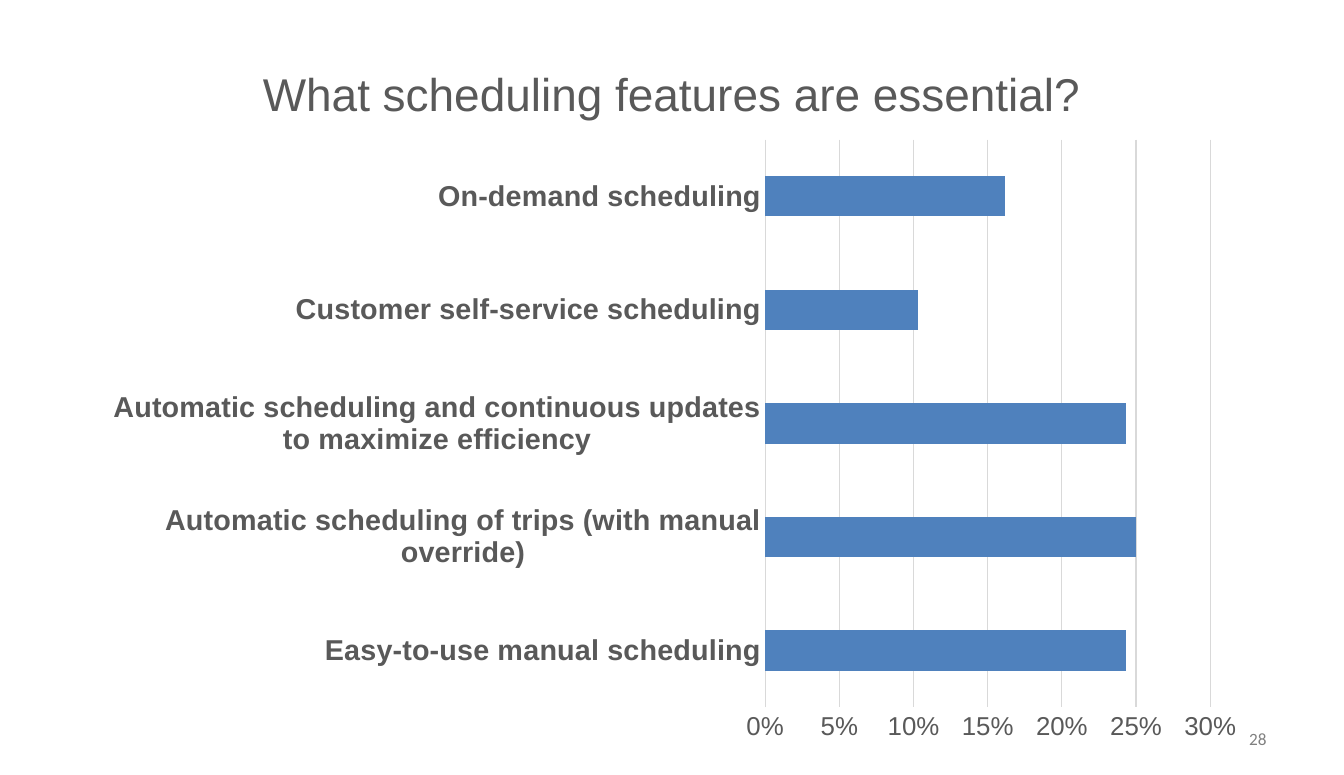
from lxml.etree import SubElement
from pptx import Presentation
from pptx.chart.data import CategoryChartData
from pptx.dml.color import RGBColor
from pptx.enum.chart import XL_CHART_TYPE as ChartType, XL_TICK_MARK as TickMark
from pptx.enum.text import MSO_ANCHOR as Anchor, PP_ALIGN as Align
from pptx.oxml.ns import qn
from pptx.util import Inches, Pt

COLORS = {"text": "595959", "number": "808080", "grid": "D9D9D9", "bar": "4F81BD"}
FEATURES = {
    "Easy-to-use manual scheduling": 0.243,
    "Automatic scheduling of trips (with manual override)": 0.25,
    "Automatic scheduling and continuous updates to maximize efficiency": 0.243,
    "Customer self-service scheduling": 0.103,
    "On-demand scheduling": 0.162,
}
PLOT_AREA = {"x": 0.58, "y": 0.02, "w": 0.38, "h": 0.91}


def color(name):
    return RGBColor.from_string(COLORS[name])


def style_font(font, size, color_name, name="Arial", bold=False):
    font.size = Pt(size)
    font.name = name
    font.bold = bold
    font.color.rgb = color(color_name)


def style_line(line, color_name):
    line.color.rgb = color(color_name)
    line.width = Pt(0.75)


def write_text(box, text, align, size, color_name, name="Arial"):
    frame = box.text_frame
    frame.text = text
    frame.word_wrap = True
    frame.vertical_anchor = Anchor.MIDDLE
    para = frame.paragraphs[0]
    para.alignment = align
    style_font(para.runs[0].font, size, color_name, name)


def add_title(page, text):
    title = page.shapes.title
    title.left, title.top = Inches(0.65), Inches(0.59)
    title.width, title.height = Inches(11.7), Inches(0.63)
    write_text(title, text, Align.CENTER, 32, "text")


def add_page_number(page, number):
    box = page.shapes.add_textbox(Inches(9.32), Inches(6.95), Inches(3.03), Inches(0.4))
    write_text(box, number, Align.RIGHT, 12, "number", "Calibri")


def place_plot(chart):
    plot_area = chart._chartSpace.chart.plotArea
    for old in plot_area.findall(qn("c:layout")):
        plot_area.remove(old)
    layout = SubElement(plot_area, qn("c:layout"))
    plot_area.insert(0, layout)
    manual = SubElement(layout, qn("c:manualLayout"))
    settings = {"layoutTarget": "inner", "xMode": "edge", "yMode": "edge", **PLOT_AREA}
    for tag, value in settings.items():
        SubElement(manual, qn(f"c:{tag}")).set("val", str(value))


def style_axis(axis, size, bold=False):
    axis.major_tick_mark = axis.minor_tick_mark = TickMark.NONE
    style_font(axis.tick_labels.font, size, "text", bold=bold)


def add_feature_chart(page):
    data = CategoryChartData(number_format="0%")
    data.categories = list(FEATURES)
    data.add_series("Series 1", list(FEATURES.values()))
    chart = page.shapes.add_chart(
        ChartType.BAR_CLUSTERED, Inches(0.83), Inches(1.23), Inches(11.33), Inches(6.04), data
    ).chart
    chart.has_title = False
    chart.has_legend = False
    chart.font.size = Pt(10)
    chart.font.name = "Arial"

    plot = chart.plots[0]
    plot.gap_width = 182
    plot.vary_by_categories = False
    fill = plot.series[0].format.fill
    fill.solid()
    fill.fore_color.rgb = color("bar")

    style_axis(chart.category_axis, 20, bold=True)
    style_line(chart.category_axis.format.line, "grid")

    values = chart.value_axis
    style_axis(values, 18)
    values.minimum_scale, values.maximum_scale, values.major_unit = 0, 0.3, 0.05
    values.tick_labels.number_format = "0%"
    values.tick_labels.number_format_is_linked = False
    values.format.line.fill.background()
    values.has_major_gridlines = True
    style_line(values.major_gridlines.format.line, "grid")
    place_plot(chart)


def main():
    deck = Presentation()
    deck.slide_width, deck.slide_height = Inches(13), Inches(7.5)
    page = deck.slides.add_slide(deck.slide_layouts[5])
    add_title(page, "What scheduling features are essential?")
    add_page_number(page, "28")
    add_feature_chart(page)
    deck.save("out.pptx")


if __name__ == "__main__":
    main()
